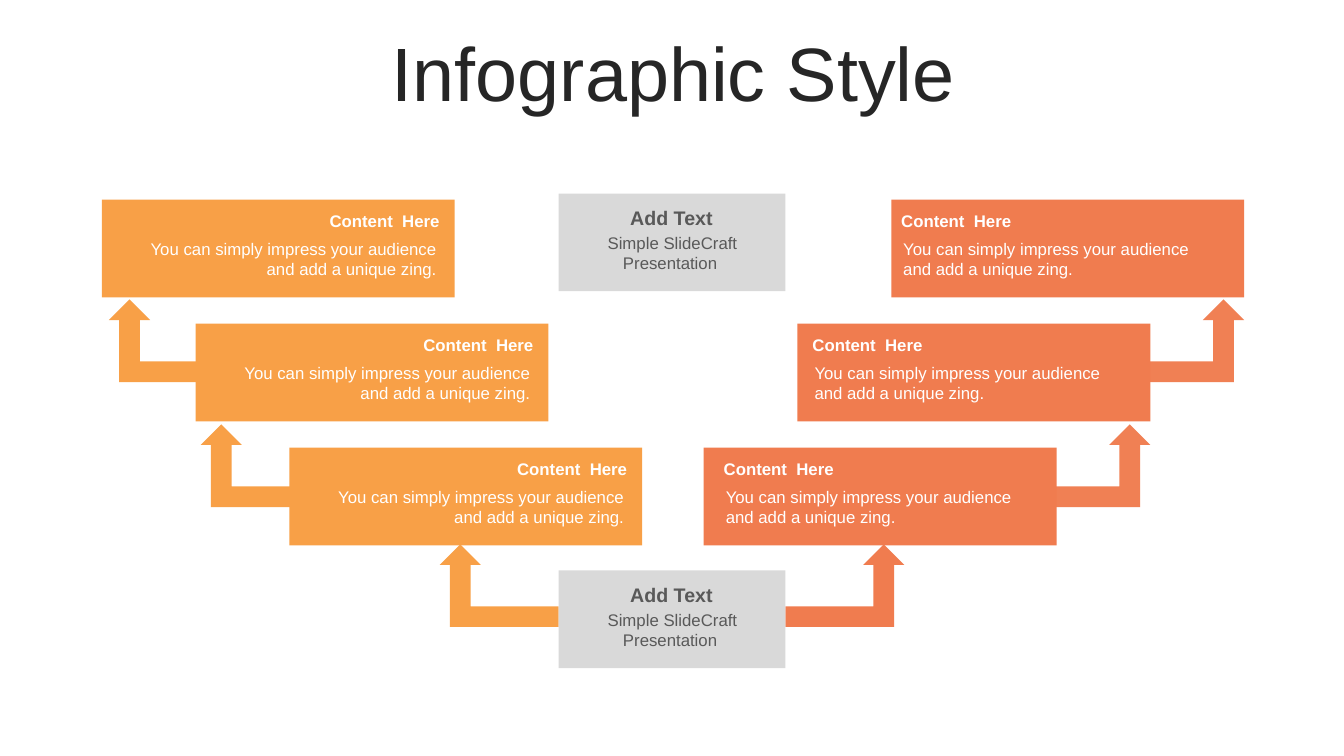
from lxml.etree import SubElement
from pptx import Presentation
from pptx.dml.color import RGBColor
from pptx.enum.shapes import MSO_SHAPE
from pptx.enum.text import MSO_ANCHOR, MSO_AUTO_SIZE, PP_ALIGN
from pptx.oxml.ns import qn
from pptx.util import Emu, Pt

PX = 9144  # 100 px to the inch

ORANGE = RGBColor(0xF8, 0xA0, 0x47)
CORAL = RGBColor(0xF0, 0x7C, 0x4F)
PALE_GREY = RGBColor(0xD9, 0xD9, 0xD9)
MID_GREY = RGBColor(0x59, 0x59, 0x59)
NEAR_BLACK = RGBColor(0x26, 0x26, 0x26)
WHITE = RGBColor(0xFF, 0xFF, 0xFF)

HEADING = "Content  Here"
BODY = "You can simply impress your audience and add a unique zing."

deck = Presentation()
deck.slide_width, deck.slide_height = Emu(1333 * PX), Emu(750 * PX)
slide = deck.slides.add_slide(deck.slide_layouts[5])


def add_block(preset, x, y, width, height, color, flip=False, opacity=100):
    block = slide.shapes.add_shape(
        preset, *(Emu(n * PX) for n in (x, y, width, height)))
    block.shadow.inherit = False
    block.fill.solid()
    block.fill.fore_color.rgb = color
    block.line.fill.background()
    if flip:
        block._element.spPr.xfrm.set("flipH", "1")
    if opacity < 100:
        fill_color = block._element.spPr.find(qn("a:solidFill"))[0]
        SubElement(fill_color, qn("a:alpha")).set("val", str(opacity * 1000))


def add_text(text, x, y, width, height, *, color, size=12, bold=False,
             align=PP_ALIGN.LEFT, holder=None):
    holder = holder or slide.shapes.add_textbox(0, 0, 0, 0)
    holder.left, holder.top, holder.width, holder.height = (
        Emu(n * PX) for n in (x, y, width, height))
    frame = holder.text_frame
    frame.word_wrap = True
    frame.auto_size = MSO_AUTO_SIZE.NONE
    frame.text = text
    paragraph = frame.paragraphs[0]
    paragraph.alignment = align
    paragraph.font.name = "Arial"
    paragraph.font.size = Pt(size)
    paragraph.font.bold = bold
    paragraph.font.color.rgb = color
    return frame


# Title
title = add_text("Infographic Style", 35, 37, 1266, 79, color=NEAR_BLACK, size=54,
                 align=PP_ALIGN.CENTER, holder=slide.shapes.title)
title.vertical_anchor = MSO_ANCHOR.MIDDLE
title.paragraphs[0].line_spacing = 0.9

# Steps on both sides, from the outer top tier to the inner bottom one
for tier in range(3):
    step_y = 198 + 123 * tier
    left_x = 101 + 93 * tier
    right_x = 884 - 93 * tier
    right_text_x = 884 - 88 * tier
    for step_x, text_x, color, align in (
            (left_x, left_x + 5, ORANGE, PP_ALIGN.RIGHT),
            (right_x, right_text_x, CORAL, PP_ALIGN.LEFT)):
        add_block(MSO_SHAPE.RECTANGLE, step_x, step_y, 350, 97, color)
        add_text(HEADING, text_x, step_y + 6, 340, 30,
                 color=WHITE, bold=True, align=align)
        add_text(BODY, text_x + 2, step_y + 34, 335, 50,
                 color=WHITE, align=align)

# Bent arrows leading up from each tier to the next
for left_x, right_x, arrow_y, right_opacity in (
        (436, 779, 540, 100), (199, 1023, 421, 97), (108, 1116, 297, 97)):
    add_block(MSO_SHAPE.BENT_UP_ARROW, left_x, arrow_y, 118, 82, ORANGE, flip=True)
    add_block(MSO_SHAPE.BENT_UP_ARROW, right_x, arrow_y, 118, 82, CORAL,
              opacity=right_opacity)

# Grey boxes at the top and bottom centre
for box_y in (192, 566):
    add_block(MSO_SHAPE.RECTANGLE, 554, box_y, 225, 97, PALE_GREY)
    add_text("Add Text", 554, box_y + 7, 224, 34, color=MID_GREY, size=14,
             bold=True, align=PP_ALIGN.CENTER)
    add_text("Simple SlideCraft Presentation ", 555, box_y + 34, 224, 50,
             color=MID_GREY, align=PP_ALIGN.CENTER)

deck.save("out.pptx")
